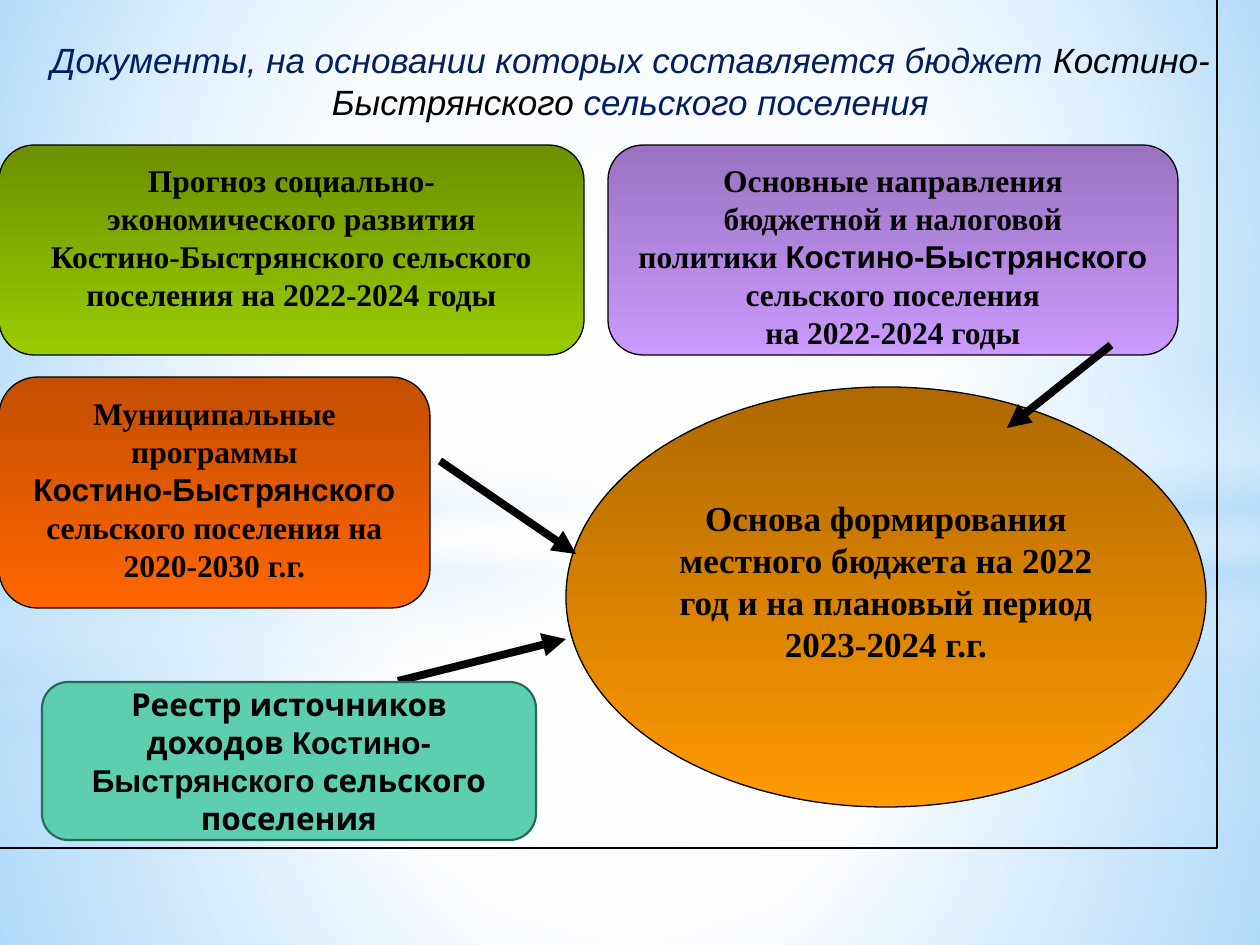
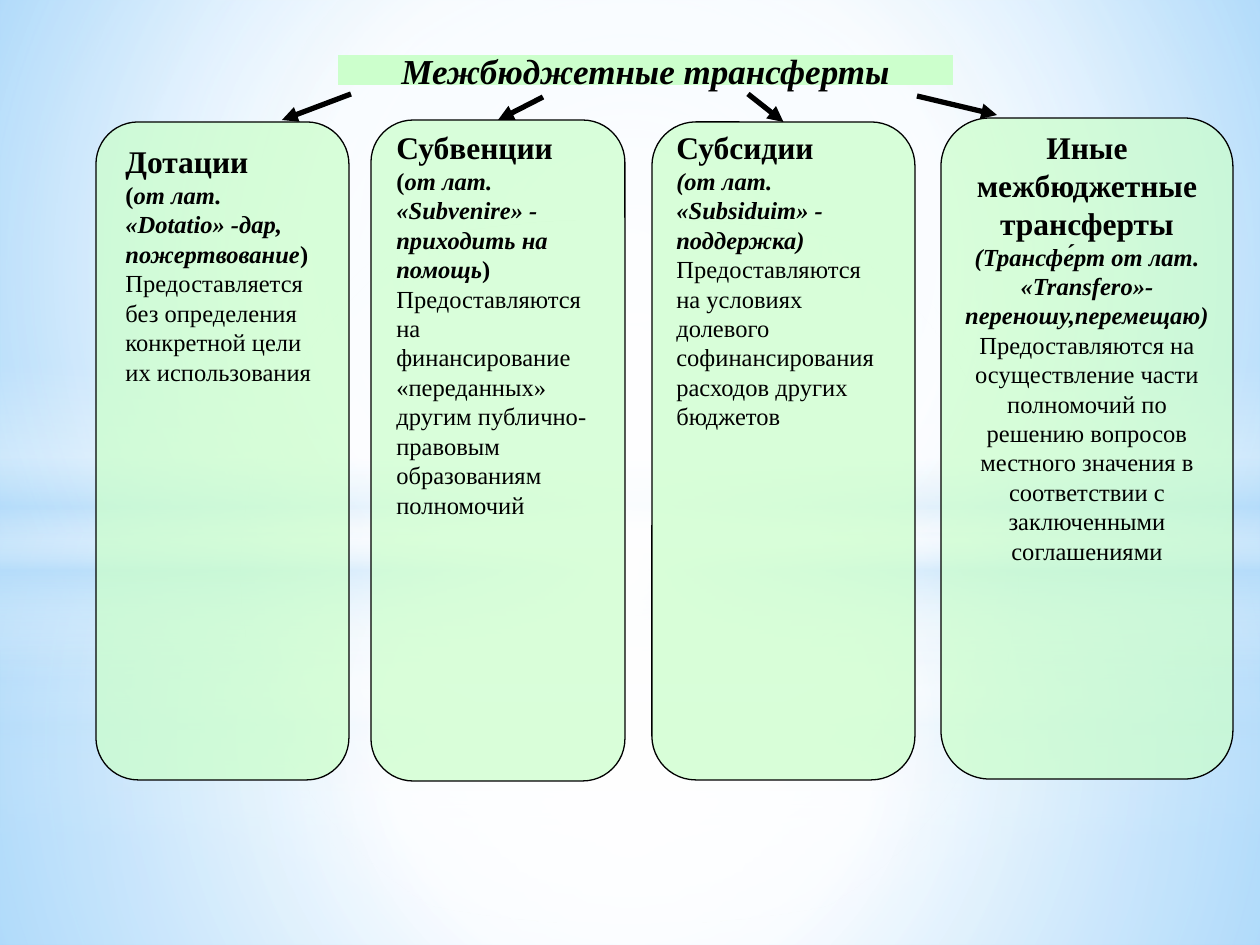
from pptx import Presentation
from pptx.dml.color import RGBColor
from pptx.enum.shapes import MSO_CONNECTOR, MSO_SHAPE
from pptx.enum.text import MSO_ANCHOR, MSO_AUTO_SIZE, PP_ALIGN
from pptx.oxml import parse_xml
from pptx.oxml.ns import nsdecls, qn
from pptx.util import Inches, Pt

SCALE = Inches(1) / 126  # EMU in one px
HEX = {
    "black": "000000", "white": "FFFFFF", "navy": "002060",
    "sky": "9ED5FF", "deep": "5BB9FF", "haze": "B4DCFA",
    "mint": "CCFFCC", "teal": "5DCEAF", "pine": "276B58",
    "moss": "6C9000", "lime": "99CC00", "plum": "9973BF", "lilac": "CC99FF",
    "rust": "C44E00", "orange": "FF6600", "brown": "AF6900", "amber": "FF9900",
}
SERIF, SANS, KARLA = "Times New Roman", "Arial", "Karla"
MID = (50, 50, 50, 50)
PILL = MSO_SHAPE.FLOWCHART_ALTERNATE_PROCESS
PLACE = "Костино-Быстрянского"


def px(*nums):
    return [round(num * SCALE) for num in nums]


def rgb(name):
    return RGBColor.from_string(HEX[name])


# Fills, lines and text

def grad(host, stops, focus=None):
    """Swap the solid fill in host for a gradient of (place, colour, alpha)."""
    marks = "".join(
        f'<a:gs pos="{at * 1000}"><a:srgbClr val="{HEX[name]}">'
        f'<a:alpha val="{alpha * 1000}"/></a:srgbClr></a:gs>'
        for at, name, alpha in stops)
    way = '<a:lin ang="5400000" scaled="0"/>'
    if focus:
        rim = " ".join(f'{side}="{num * 1000}"' for side, num in zip("ltrb", focus))
        way = f'<a:path path="circle"><a:fillToRect {rim}/></a:path>'
    host.replace(host.find(qn("a:solidFill")), parse_xml(
        f'<a:gradFill {nsdecls("a")} rotWithShape="1">'
        f'<a:gsLst>{marks}</a:gsLst>{way}</a:gradFill>'))


def style(font, name=None, size=None, bold=None, italic=None, color=None):
    if name:
        font.name = name
    if size:
        font.size = Pt(size)
    if bold is not None:
        font.bold = bold
    if italic is not None:
        font.italic = italic
    if color:
        font.color.rgb = rgb(color)


def say(frame, *runs, align=PP_ALIGN.CENTER, **look):
    """Add a paragraph; a run is a string or a (string, changes) pair."""
    par = frame.paragraphs[-1]
    if par.runs:
        par = frame.add_paragraph()
    par.alignment = align
    style(par.font, **{"name": SERIF, "color": "black", **look})
    for item in runs:
        text, change = (item, {}) if isinstance(item, str) else item
        run = par.add_run()
        run.text = text
        style(run.font, **change)


def draw(slide, kind, box, fill=None, line="black", width=0.75):
    shape = slide.shapes.add_shape(kind, *px(*box))
    shape.shadow.inherit = False
    if fill:
        shape.fill.solid()
        shape.fill.fore_color.rgb = rgb(fill)
    else:
        shape.fill.background()
    if line:
        shape.line.color.rgb = rgb(line)
        shape.line.width = Pt(width)
    else:
        shape.line.fill.background()
    shape.text_frame.word_wrap = True
    shape.text_frame.vertical_anchor = MSO_ANCHOR.TOP
    return shape


def shade(slide, kind, box, dark, light):
    shape = draw(slide, kind, box, light)
    grad(shape.element.spPr, [(0, dark, 100), (100, light, 100)])
    return shape.text_frame


def arrow(slide, ends, width, goal=None):
    link = slide.shapes.add_connector(MSO_CONNECTOR.STRAIGHT, *px(*ends))
    if goal is not None:
        link.end_connect(goal, 0)
    link.line.color.rgb = rgb("black")
    link.line.width = Pt(width)
    props = link.element.spPr
    props.find(qn("a:ln")).append(
        parse_xml(f'<a:tailEnd {nsdecls("a")} type="triangle"/>'))
    props.append(parse_xml(f'<a:effectLst {nsdecls("a")}/>'))


def head(slide, box, anchor):
    title = slide.shapes.title
    title.left, title.top, title.width, title.height = px(*box)
    frame = title.text_frame
    frame.auto_size = MSO_AUTO_SIZE.NONE
    frame.vertical_anchor = anchor
    return title, frame


# Shared backdrop

def sky(slide, tree, split, band, lift, fade):
    """Move one set of haze layers into the layout, under its placeholders."""
    low = [(0, "white", 91 + lift), (37, "white", 76 + lift), (100, "haze", 79 + lift)]
    high = [(0, "white", 89 + lift), (48, "white", 62 + lift), (100, "haze", 79 + lift)]
    belt = [(0, "white", 0), (29, "white", 30), (45, "haze", 40),
            (55, "white", 26), (65, "haze", 60), (100, "white", 0)]
    glow = [(0, "white", 100), (fade, "white", 0)]
    rect, oval = MSO_SHAPE.RECTANGLE, MSO_SHAPE.OVAL
    layers = [(rect, split, 945 - split, low, MID), (rect, 0, split, high, MID),
              (rect, band, 315, belt, None), (oval, 220, 703, glow, MID)]
    spot = tree.index(tree.find(qn("p:sp")))
    if lift:
        spot += len(layers)
    for num, (kind, top, tall, stops, focus) in enumerate(layers, spot):
        node = draw(slide, kind, (0, top, 1260, tall), "white", None).element
        grad(node.spPr, stops, focus)
        node.nvSpPr.cNvPr.set("id", str(100 + num))
        tree.insert(num, node)


def backdrop(deck, layout, slide):
    master = deck.slide_master
    master.background.fill.solid()
    grad(next(master.element.iter(qn("p:bgPr"))),
         [(0, "sky", 100), (60, "white", 100), (100, "deep", 100)], (20, 10, 20, 60))
    tree = layout.shapes.element
    sky(slide, tree, 703, 519, 0, 56)
    sky(slide, tree, 533, 365, 1, 54)


# Slide 1: documents behind the budget

def basis(slide):
    _, frame = head(slide, (32, 32, 1197, 97), MSO_ANCHOR.TOP)
    say(frame, "Документы, на основании которых составляется бюджет ",
        (PLACE, {"color": "black"}), " сельского поселения",
        name=SANS, size=20, italic=True, color="navy")
    draw(slide, MSO_SHAPE.RECTANGLE, (-74, -44, 1291, 892))

    # Result
    goal = shade(slide, MSO_SHAPE.OVAL, (566, 387, 640, 420), "brown", "amber")
    goal.margin_top = px(48)[0]
    say(goal, "Основа формирования местного бюджета на 2022 год "
        "и на плановый период 2023-2024 г.г.", size=20, bold=True)

    # Sources
    local = (PLACE, {"name": SANS})
    sources = [
        ((-1, 377, 431, 231), "rust", "orange",
         [["Муниципальные"], ["программы"],
          [local, " сельского поселения на 2020-2030 г.г."]]),
        ((-1, 145, 585, 210), "moss", "lime",
         [["Прогноз социально-"], ["экономического развития"],
          [PLACE + " сельского поселения на 2022-2024 годы"]]),
        ((608, 145, 570, 210), "plum", "lilac",
         [["Основные направления"], ["бюджетной и налоговой"],
          ["политики ", local, " сельского поселения"], ["на 2022-2024 годы"]]),
    ]
    for box, dark, light, lines in sources:
        frame = shade(slide, PILL, box, dark, light)
        for runs in lines:
            say(frame, *runs, size=18, bold=True)

    for ends in ((398, 681, 566, 639), (440, 461, 576, 554), (1111, 345, 1007, 428)):
        arrow(slide, ends, 4.5)

    # Register of income sources
    frame = draw(slide, MSO_SHAPE.ROUNDED_RECTANGLE, (42, 682, 494, 158),
                 "teal", "pine", 1.25).text_frame
    frame.vertical_anchor = MSO_ANCHOR.MIDDLE
    say(frame, "Реестр источников доходов ", local, " сельского поселения",
        name=KARLA, size=18, bold=True)


# Slide 2: kinds of transfers

def card(slide, box, alpha):
    shape = draw(slide, PILL, box, "mint")
    tone = shape.element.spPr.find(qn("a:solidFill"))[0]
    tone.append(parse_xml(f'<a:alpha {nsdecls("a")} val="{alpha * 1000}"/>'))
    return shape


def note(slide, box, pad, drop, tall):
    left, top, wide, _ = box
    area = slide.shapes.add_textbox(*px(left + pad, top + drop, wide - 2 * pad, tall))
    area.text_frame.word_wrap = True
    area.text_frame.auto_size = MSO_AUTO_SIZE.SHAPE_TO_FIT_TEXT
    return area.text_frame


def kinds(slide):
    title, frame = head(slide, (338, 55, 615, 30), MSO_ANCHOR.MIDDLE)
    title.fill.solid()
    title.fill.fore_color.rgb = rgb("mint")
    frame.word_wrap = False
    say(frame, "Межбюджетные трансферты", size=20, bold=True, italic=True)

    # Three cards with a name, an origin and a purpose
    slant = {"italic": True}
    cards = [
        ((96, 122, 253, 658), 74, (17, 14, 258), "Дотации",
         ["(", ("от лат. «Dotatio» -дар, пожертвование", slant), ")"],
         "Предоставляется без определения конкретной цели их использования"),
        ((371, 120, 254, 661), 72, (13, 2, 407), "Субвенции",
         ["(", ("от лат. «Subvenire» - приходить на помощь", slant), ")"],
         "Предоставляются на финансирование «переданных» другим "
         "публично-правовым образованиям полномочий"),
        ((652, 122, 263, 658), 74, (12, 0, 318), "Субсидии",
         [("(от лат. «Subsiduim» - поддержка)", slant)],
         "Предоставляются на условиях долевого софинансирования "
         "расходов других бюджетов"),
    ]
    shapes = []
    for box, alpha, inset, name, origin, use in cards:
        shapes.append(card(slide, box, alpha))
        frame = note(slide, box, *inset)
        say(frame, name, align=PP_ALIGN.LEFT, size=18, bold=True)
        say(frame, *origin, align=PP_ALIGN.LEFT, size=14, bold=True)
        say(frame, use, align=PP_ALIGN.LEFT, size=14, bold=False)

    # Other transfers, centred in one paragraph
    box = (941, 118, 292, 661)
    shapes.append(card(slide, box, 72))
    say(note(slide, box, 10, 4, 454),
        ("Иные межбюджетные трансферты", {"size": 18, "bold": True}),
        (" ", {"name": SANS, "size": 9}),
        ("(Трансфе́рт от лат. «Transfero»-переношу,перемещаю) ",
         {"bold": True, "italic": True}),
        "Предоставляются на осуществление части полномочий по решению "
        "вопросов местного значения в соответствии с заключенными соглашениями",
        size=14)

    # Arrows from the title to the cards
    arrow(slide, (351, 94, 282, 120), 3)
    arrow(slide, (543, 97, 498, 120), 3, shapes[1])
    arrow(slide, (748, 94, 783, 122), 3, shapes[2])
    arrow(slide, (917, 96, 997, 115), 3)


def main():
    deck = Presentation()
    deck.slide_width, deck.slide_height = px(1260, 945)
    layout = deck.slide_layouts[5]
    first, second = [deck.slides.add_slide(layout) for _ in range(2)]
    backdrop(deck, layout, first)
    basis(first)
    kinds(second)
    deck.save("out.pptx")


if __name__ == "__main__":
    main()
